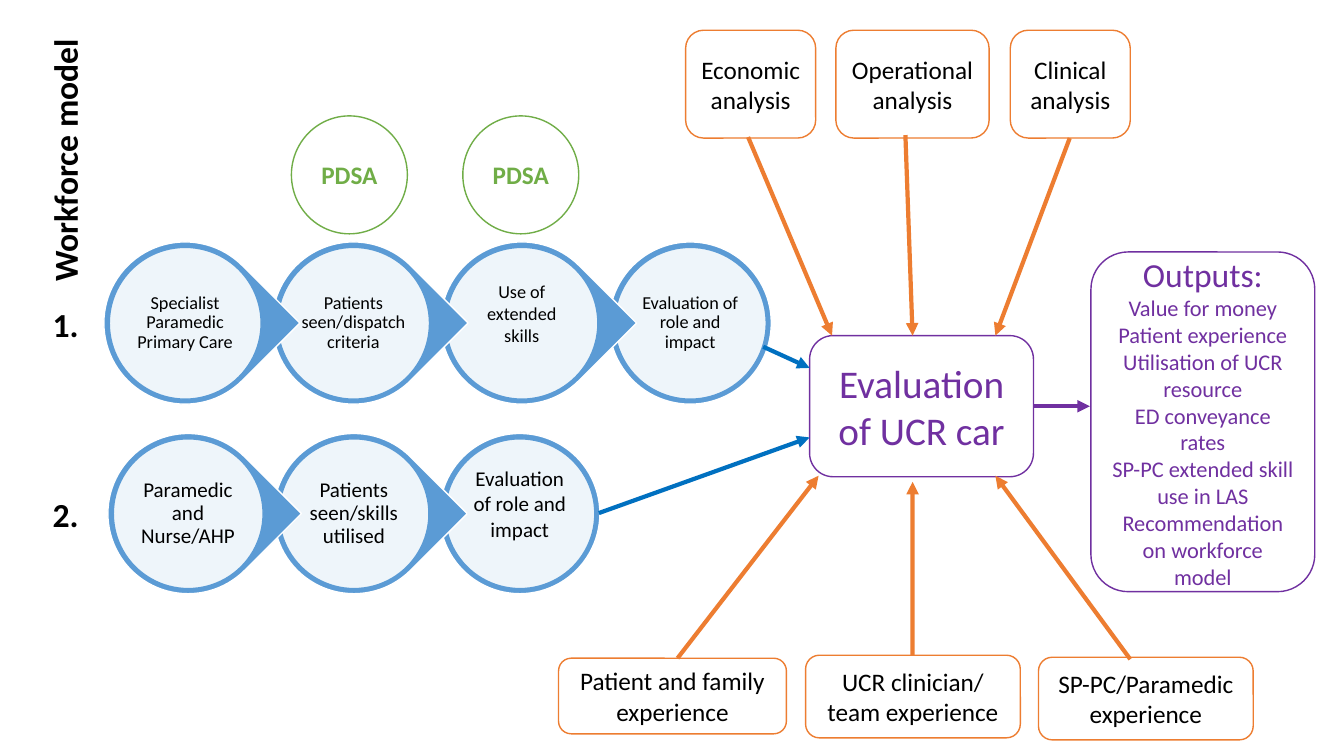
from lxml import etree
from pptx import Presentation, util as u
from pptx.dml.color import RGBColor
from pptx.enum import shapes as kinds, text as t
from pptx.oxml.ns import qn

# Grid of square cells, a tenth of an inch each: 133.3 columns by 75 rows
CELL = u.Inches(0.1)
COLUMNS, ROWS = 133.3, 75
FONT = "Calibri"
BLACK, WHITE, PURPLE = "000000", "FFFFFF", "7030A0"
ORANGE, GREEN, BLUE, STEEL = "ED7D31", "70AD47", "0070C0", "5B9BD5"
SHAPE = kinds.MSO_SHAPE


def colour(code):
    return RGBColor.from_string(code)


def cells(*lengths):
    return [round(length * CELL) for length in lengths]


def write(box, lines, size, ink=BLACK, bold=False, spacing=None):
    """Fill a box with centred lines and return its text frame."""
    frame = box.text_frame
    frame.text = "\n".join(lines)
    frame.word_wrap = True
    frame.vertical_anchor = t.MSO_ANCHOR.MIDDLE
    for para in frame.paragraphs:
        para.alignment = t.PP_ALIGN.CENTER
        para.line_spacing = spacing
        for span in para.runs:
            span.font.name = FONT
            span.font.size = u.Pt(size)
            span.font.bold = bold
            span.font.color.rgb = colour(ink)
    return frame


def outline(parent, kind, place, line, fill=None):
    shape = parent.shapes.add_shape(kind, *cells(*place))
    shape.shadow.inherit = False
    if fill:
        shape.fill.solid()
        shape.fill.fore_color.rgb = colour(fill)
    else:
        shape.fill.background()
    shape.line.color.rgb = colour(line)
    shape.line.width = u.Pt(1)
    return shape


def label(parent, place, lines, size, **style):
    box = parent.shapes.add_textbox(*cells(*place))
    return box, write(box, lines, size, **style)


def arrow(page, start, end, ink):
    line = page.shapes.add_connector(
        kinds.MSO_CONNECTOR.STRAIGHT, *cells(*start, *end))
    line.line.color.rgb = colour(ink)
    line.line.width = u.Pt(3)
    etree.SubElement(line.line._get_or_add_ln(), qn("a:tailEnd"), type="triangle")
    etree.SubElement(line._element.spPr, qn("a:effectLst"))


def step_chain(page, place, pitch, steps, size, lift):
    """Row of discs, each pointing to the next; the last text sits higher."""
    left, top, side = place
    chain = page.shapes.add_group_shape()
    last = len(steps) - 1
    for index in range(last, -1, -1):
        x = left + index * pitch
        kind = SHAPE.OVAL if index == last else SHAPE.TEAR
        disc = outline(chain, kind, (x, top, side, side), WHITE, STEEL)
        if kind == SHAPE.TEAR:
            disc.rotation = 45
        # Pale inner disc
        inner = side - 1.04
        pale = outline(chain, SHAPE.OVAL, (x + 0.54, top + 0.54, inner, inner),
                       STEEL, WHITE)
        tint = pale.fill._xPr.find(qn("a:solidFill"))[0]
        etree.SubElement(tint, qn("a:alpha"), val="90000")
        # Step name
        edge = side / 6
        raised = index == lift
        _, frame = label(chain, (x + edge, top + edge, side * 2 / 3, side * 2 / 3),
                         [steps[index]], size, spacing=1.0 if raised else 0.9)
        frame.margin_left = frame.margin_right = frame.margin_top = u.Inches(0.02)
        frame.margin_bottom = u.Inches(0.22 if raised else 0.02)


def workforce_model(page):
    heading, _ = label(page, (-8.8, 12.5, 30.4, 6.8), ["Workforce model"], 24, bold=True)
    heading.rotation = 270
    for number, top in (("1.", 28.7), ("2.", 47.6)):
        label(page, (2.4, top, 8.2, 6.8), [number], 24, bold=True)
    step_chain(page, (10.3, 24, 16.1), 16.7,
               ["Specialist Paramedic Primary Care", "Patients seen/dispatch criteria",
                "Use of extended skills", "Evaluation of role and impact"], 13, 2)
    step_chain(page, (10.7, 43, 15.9), 16.45,
               ["Paramedic and Nurse/AHP", "Patients seen/skills utilised",
                "Evaluation of role and impact"], 15, 2)
    # Improvement cycles above the first row
    for left in (28.9, 45.9):
        cycle = outline(page, SHAPE.OVAL, (left, 11.5, 11.5, 11.7), GREEN)
        write(cycle, ["PDSA"], 18, GREEN, bold=True)


def evidence(page, hub, sources):
    """Orange boxes, each with an arrow to a point on the hub."""
    left, top, width, _ = hub
    for place, lines, start, share, drop in sources:
        box = outline(page, SHAPE.ROUNDED_RECTANGLE, place, ORANGE)
        write(box, lines, 18)
        arrow(page, start, (left + width * share, top + drop), ORANGE)


def evaluation(page, hub):
    left, top, width, height = hub
    box = outline(page, SHAPE.ROUNDED_RECTANGLE, hub, PURPLE)
    write(box, ["Evaluation of UCR car"], 28, PURPLE)
    # Arrows from the two workforce rows, then to the outputs
    arrow(page, (75.7, 34.4), (left, top + 3.2), BLUE)
    arrow(page, (59.4, 50.9), (left, top + 10.1), BLUE)
    middle = top + height / 2
    arrow(page, (left + width, middle), (108.1, middle), PURPLE)


def outputs(page, place):
    box = outline(page, SHAPE.ROUNDED_RECTANGLE, place, PURPLE)
    frame = write(box, ["Outputs:", "Value for money", "Patient experience",
                        "Utilisation of UCR resource", "ED conveyance rates",
                        "SP-PC extended skill use in LAS",
                        "Recommendation on workforce model"], 16, PURPLE)
    frame.paragraphs[0].runs[0].font.size = u.Pt(24)


def main():
    deck = Presentation()
    deck.slide_width, deck.slide_height = cells(COLUMNS, ROWS)
    page = deck.slides.add_slide(deck.slide_layouts[6])
    hub = (80.3, 33.3, 22.2, 14)
    workforce_model(page)
    evaluation(page, hub)
    # Box, text, arrow start, share of hub width and rows below hub top
    evidence(page, hub, [
        ((68, 3, 12.9, 10.7), ["Economic analysis"], (74.2, 13.6), 0.1, 0),
        ((82.9, 3, 15.2, 10.7), ["Operational analysis"], (89.8, 13.4), 0.46, 0),
        ((100.2, 3, 11.9, 10.7), ["Clinical analysis"], (106.1, 13.7), 0.83, 0),
        ((55.4, 65.3, 22.6, 7.5), ["Patient and family experience"],
         (67.2, 65.3), 0.04, 13.9),
        ((79.9, 65, 21.3, 8.2), ["UCR clinician/", "team experience"],
         (90.5, 65), 0.46, 14.5),
        ((103, 65.2, 21.3, 8.2), ["SP-PC/Paramedic experience"],
         (112.1, 65.4), 0.83, 13.9),
    ])
    outputs(page, (108.2, 25, 22.2, 33.7))
    deck.save("out.pptx")


if __name__ == "__main__":
    main()
